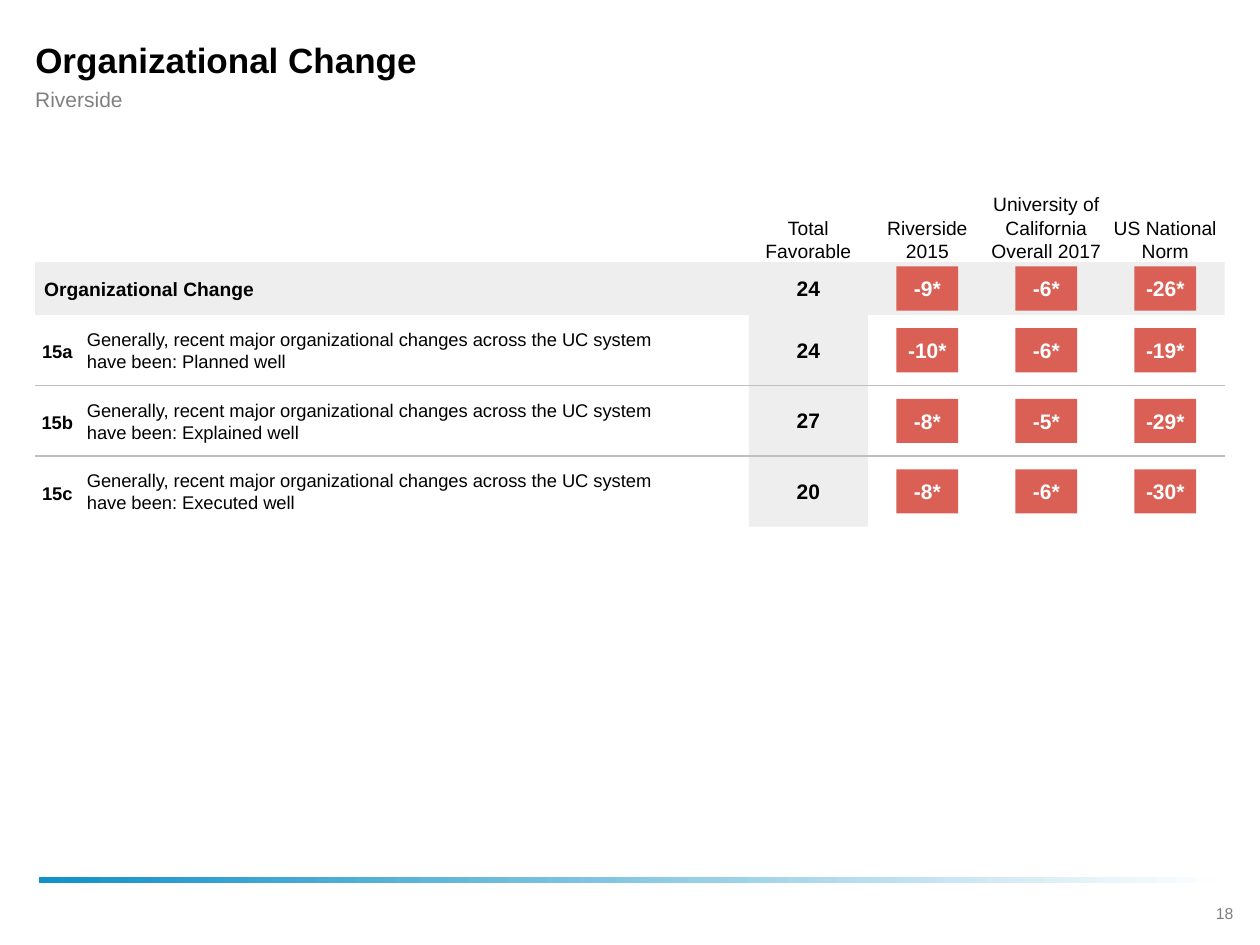
from lxml.etree import SubElement
from pptx import Presentation
from pptx.dml.color import RGBColor
from pptx.enum.shapes import MSO_CONNECTOR, MSO_SHAPE
from pptx.enum.text import MSO_ANCHOR, PP_ALIGN
from pptx.oxml.ns import qn
from pptx.util import Inches, Pt

BLACK = RGBColor(0x00, 0x00, 0x00)
WHITE = RGBColor(0xFF, 0xFF, 0xFF)
GRAY = RGBColor(0x80, 0x80, 0x80)
PAGE = RGBColor(0x7F, 0x7F, 0x7F)
BAND = RGBColor(0xEE, 0xEE, 0xEE)
RULE = RGBColor(0xBF, 0xBF, 0xBF)
RED = RGBColor(0xDA, 0x60, 0x56)
BLUE = RGBColor(0x12, 0x91, 0xC7)

WIDE, HIGH = 10, 7.5
EDGE = 0.28
SPAN = WIDE - 2 * EDGE
COL = SPAN / 10
LABEL = 6 * COL
HEAD, TOTAL, ROW = 1.11, 0.42, 0.56
TOP = 0.97
CHIP_W, CHIP_H = 0.49, 0.35

HEADS = ["Total Favorable", "Riverside 2015",
         "University of California Overall 2017", "US National Norm"]
SCORES = ["24", "-9*", "-6*", "-26*"]
STEM = "Generally, recent major organizational changes across the UC system have been: "
ITEMS = [
    ("15a", "Planned well", ["24", "-10*", "-6*", "-19*"]),
    ("15b", "Explained well", ["27", "-8*", "-5*", "-29*"]),
    ("15c", "Executed well", ["20", "-8*", "-6*", "-30*"]),
]


def write(shape, text, size, color=BLACK, bold=False, align=PP_ALIGN.LEFT,
          anchor=MSO_ANCHOR.MIDDLE, inset=(0, 0, 0, 0), wrap=True):
    frame = shape.text_frame
    frame.word_wrap = wrap
    frame.vertical_anchor = anchor
    (frame.margin_left, frame.margin_top,
     frame.margin_right, frame.margin_bottom) = map(Inches, inset)
    line = frame.paragraphs[0]
    line.alignment = align
    run = line.add_run()
    run.text = text
    font = run.font
    font.name, font.size, font.bold = "Arial", Pt(size), bold
    font.color.rgb = color


def label(slide, box, text, size, **style):
    write(slide.shapes.add_textbox(*map(Inches, box)), text, size, **style)


def block(slide, box, color):
    shape = slide.shapes.add_shape(MSO_SHAPE.RECTANGLE, *map(Inches, box))
    shape.shadow.inherit = False
    shape.line.fill.background()
    shape.fill.solid()
    shape.fill.fore_color.rgb = color
    return shape


def rule(slide, left, top, width):
    line = slide.shapes.add_connector(
        MSO_CONNECTOR.STRAIGHT, Inches(left), Inches(top),
        Inches(left + width), Inches(top))
    line.line.color.rgb = RULE
    line.line.width = Pt(0.75)
    SubElement(line._element.spPr, qn("a:effectLst"))


def title(slide, left, top, width):
    head = slide.shapes.title
    head.left, head.top, head.width, head.height = map(
        Inches, (left, top, width, 0.38))
    write(head, "Organizational Change", 20, bold=True, inset=(0, 0, 0.35, 0))
    label(slide, (left, top + 0.4, width, 0.21), "Riverside", 12,
          color=GRAY, inset=(0, 0, 0.35, 0))


def heads(slide, left, top):
    for i, text in enumerate(HEADS):
        label(slide, (left + i * COL, top, COL, HEAD), text, 11,
              align=PP_ALIGN.CENTER, anchor=MSO_ANCHOR.BOTTOM)


def scores(slide, left, top, height, values):
    """Place the total as plain text and each gap to it as a red chip."""
    total, *gaps = values
    mid = top + height / 2
    label(slide, (left, mid - 0.1, COL, 0.19), total, 12, bold=True,
          align=PP_ALIGN.CENTER)
    for i, gap in enumerate(gaps, 1):
        x = left + i * COL + (COL - CHIP_W) / 2
        chip = block(slide, (x, mid - CHIP_H / 2, CHIP_W, CHIP_H), RED)
        write(chip, gap, 12, color=WHITE, bold=True, align=PP_ALIGN.CENTER,
              inset=(0, 0.05, 0, 0.05), wrap=False)


def summary(slide, left, top):
    band = block(slide, (left, top, SPAN, TOTAL), BAND)
    write(band, "Organizational Change", 11, bold=True,
          inset=(0.07, 0, 0.07, 0))
    scores(slide, left + LABEL, top, TOTAL, SCORES)


def item(slide, left, top, code, end, values):
    block(slide, (left + LABEL, top, COL, ROW), BAND)
    label(slide, (left, top + 0.18, 0.35, 0.22), code, 10.5, bold=True,
          align=PP_ALIGN.CENTER)
    label(slide, (left + 0.34, top + 0.05, 5.1, 0.46), STEM + end, 10.5,
          inset=(0.07, 0, 0.35, 0))
    scores(slide, left + LABEL, top, ROW, values)


def table(slide, left, top):
    heads(slide, left + LABEL, top)
    summary(slide, left, top + HEAD)
    first = top + HEAD + TOTAL
    for i, (code, end, values) in enumerate(ITEMS):
        item(slide, left, first + i * ROW, code, end, values)
    for i in range(1, len(ITEMS)):
        rule(slide, left, first + i * ROW, SPAN)


def footer(slide, left, top, width):
    bar = block(slide, (left, top, width, 0.05), BLUE)
    bar.fill.gradient()
    bar.fill.gradient_angle = 0
    for stop, color, place in zip(bar.fill.gradient_stops, (BLUE, WHITE), (0, 1)):
        stop.color.rgb = color
        stop.position = place
    label(slide, (9.46, top + 0.16, 0.52, 0.25), "18", 9, color=PAGE,
          align=PP_ALIGN.CENTER, inset=(0.1, 0.05, 0.1, 0.05))


def main():
    deck = Presentation()
    deck.slide_width, deck.slide_height = Inches(WIDE), Inches(HIGH)
    slide = deck.slides.add_slide(deck.slide_layouts[5])
    footer(slide, 0.31, 6.96, 9.42)
    title(slide, EDGE, EDGE, SPAN)
    table(slide, EDGE, TOP)
    deck.save("out.pptx")


if __name__ == "__main__":
    main()
